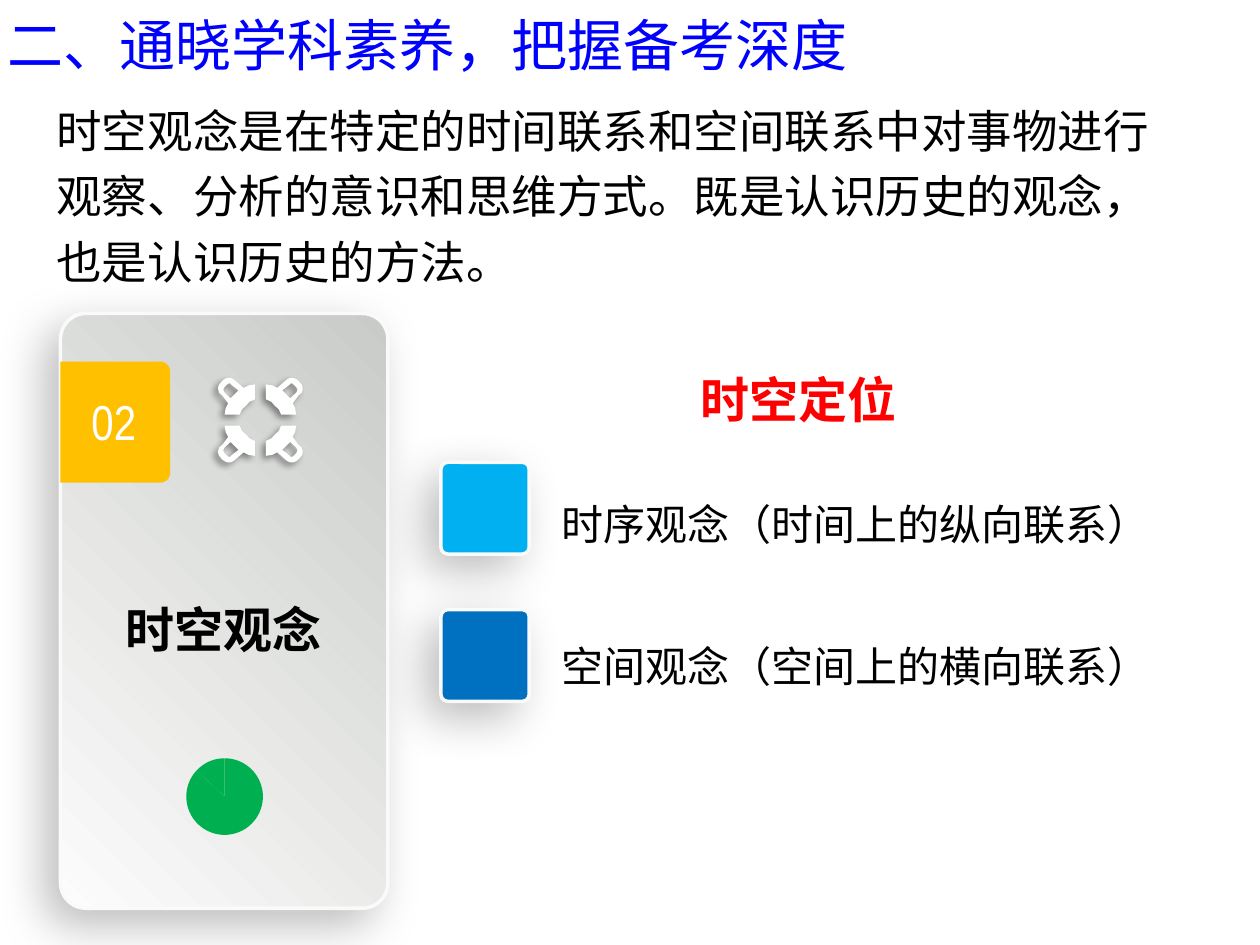
from math import cos, sin, pi
from pptx import Presentation
from pptx.chart.data import CategoryChartData as Data
from pptx.dml.color import RGBColor as Rgb
from pptx.enum.chart import XL_CHART_TYPE as Kind
from pptx.enum.shapes import MSO_SHAPE as Form
from pptx.enum.text import PP_ALIGN as Align
from pptx.oxml import parse_xml
from pptx.oxml.ns import nsdecls, qn
from pptx.util import Cm, Pt

HUE = {
    "title": "0000FF", "text": "000000", "red": "FF0000", "white": "FFFFFF",
    "edge": "FAFAFA", "dark": "C9CBC8", "light": "FCFCFC", "badge": "FFC000",
    "pie": "00B050", "time": "00B0F0", "space": "0070C0",
}
SANS, SLIM = "Noto Sans CJK SC", "Arial Narrow"
HEAD = {"size": Pt(28), "bold": True}
ITEM = {"size": Pt(24)}

TEXTS = [
    ("二、通晓学科素养，把握备考深度", (-0.1, 0.08, 19.35, 1.63),
     "title", SANS, {"size": Pt(32)}, {}),
    ("02", (1.47, 7.77, 1.65, 1.45),
     "white", SLIM, {"size": Pt(28)}, {"alignment": Align.CENTER}),
    ("时空观念", (1.27, 11.96, 6.48, 1.45),
     "text", SANS, HEAD, {"alignment": Align.CENTER}),
    ("时空观念是在特定的时间联系和空间联系中对事物进行观察、分析的意识和思维方式。"
     "既是认识历史的观念，也是认识历史的方法。", (0.89, 1.73, 23.39, 4.27),
     "text", SANS, {"size": Pt(26)}, {"line_spacing": 1.2}),
    ("时序观念（时间上的纵向联系）", (11.07, 9.42, 12.93, 1.63),
     "text", SANS, ITEM, {"line_spacing": 1.5}),
    ("空间观念（空间上的横向联系）", (11.07, 12.27, 12.93, 1.8),
     "text", SANS, ITEM, {"line_spacing": 1.5}),
    ("时空定位", (11.02, 7.32, 10.16, 1.45),
     "red", SANS, HEAD, {"alignment": Align.CENTER}),
]
CARD = (1.22, 6.32, 6.6, 11.99)
TILES = [("time", (8.89, 9.32, 1.78, 1.85)), ("space", (8.89, 12.29, 1.78, 1.85))]
PIE = (2.84, 14.94, 3.38, 2.24)
SHARE = [("1", 87), ("2", 13)]
PLOT = {"x": 0.27, "y": 0.155, "w": 0.46, "h": 0.69}
SOFT = (26, 27, 12)
TIGHT = (40, 4, 3)

ARM = [(42, 11), (72, 11), (70, 24), (65, 34), (77, 50), (83, 55), (85, 61), (85, 67),
       (83, 72), (77, 79), (72, 83), (67, 85), (60, 85), (55, 83), (50, 79), (34, 65),
       (24, 70), (11, 72), (11, 42), (22, 37), (29, 29), (37, 22)]
HOLE = [(60, 44), (44, 60), (57, 70), (62, 75), (67, 72), (72, 67), (75, 61), (72, 55)]
RING = [[(x * a, y * b) for x, y in loop]
        for a in (1, -1) for b in (1, -1) for loop in (ARM, HOLE)]


def arc(x, y, r, start):
    turns = [start + pi / 2 * i / 8 for i in range(9)]
    return [(x + r * cos(t), y + r * sin(t)) for t in turns]


TAB = [[(0, 0), *arc(201, 20, 20, -pi / 2), *arc(201, 224, 20, 0), (0, 244)]]


def box(at):
    return [Cm(v) for v in at]


def tint(fill, hue):
    fill.solid()
    fill.fore_color.rgb = Rgb.from_string(HUE[hue])


def shade(shape, alpha, blur, dist):
    shape.shadow.inherit = False
    glow = parse_xml(
        f'<a:outerShdw {nsdecls("a")} blurRad="{Pt(blur)}" dist="{Pt(dist)}" '
        f'dir="8100000" algn="tr" rotWithShape="0"><a:srgbClr val="000000">'
        f'<a:alpha val="{alpha * 1000}"/></a:srgbClr></a:outerShdw>')
    shape._element.spPr.find(qn("a:effectLst")).append(glow)


def panel(slide, at):
    shape = slide.shapes.add_shape(Form.ROUNDED_RECTANGLE, *box(at))
    shape.adjustments[0] = 0.078
    tint(shape.line.fill, "edge")
    shape.line.width = Pt(2)
    shade(shape, *SOFT)
    return shape


def outline(slide, loops, x, y, hue):
    pen = slide.shapes.build_freeform(*loops[0][0], scale=Cm(0.01))
    for i, loop in enumerate(loops):
        if i:
            pen.move_to(*loop[0])
        pen.add_line_segments(loop[1:], close=True)
    shape = pen.convert_to_shape(Cm(x), Cm(y))
    tint(shape.fill, hue)
    shape.line.fill.background()
    shape.shadow.inherit = False
    return shape


def write(slide, words, at, hue, face, style, para):
    frame = slide.shapes.add_textbox(*box(at)).text_frame
    frame.word_wrap = True
    line = frame.paragraphs[0]
    run = line.add_run()
    run.text = words
    for part, values in ((line, para), (run.font, {"name": face, **style})):
        for key, value in values.items():
            setattr(part, key, value)
    run.font.color.rgb = Rgb.from_string(HUE[hue])
    run.font._element.append(parse_xml(f'<a:ea {nsdecls("a")} typeface="{face}"/>'))


def draw_pie(slide):
    data = Data()
    data.categories = [name for name, _ in SHARE]
    data.add_series("Series 1", [value for _, value in SHARE])
    chart = slide.shapes.add_chart(Kind.PIE, *box(PIE), data).chart
    chart.has_title = chart.has_legend = False
    chart.font.name, chart.font.size = "Calibri", Pt(18)
    chart.font.color.rgb = Rgb.from_string(HUE["text"])
    plot = chart.plots[0]
    plot.vary_by_categories = False
    for i in range(len(SHARE)):
        form = plot.series[0].points[i].format
        tint(form.fill, "pie")
        form.line.fill.background()
    area = chart._chartSpace.chart.plotArea
    for old in area.findall(qn("c:layout")):
        area.remove(old)
    spots = "".join(f'<c:{k} val="{v}"/>' for k, v in PLOT.items())
    area.insert(0, parse_xml(
        f'<c:layout {nsdecls("c")}><c:manualLayout><c:layoutTarget val="inner"/>'
        f'<c:xMode val="edge"/><c:yMode val="edge"/>{spots}</c:manualLayout></c:layout>'))


def main():
    deck = Presentation()
    deck.slide_width, deck.slide_height = Cm(25.4), Cm(19.05)
    slide = deck.slides.add_slide(deck.slide_layouts[6])
    card = panel(slide, CARD)
    card.fill.gradient()
    card.fill.gradient_angle = 225
    for stop, hue, spot in zip(card.fill.gradient_stops, ("dark", "light"), (0, 1)):
        stop.color.rgb = Rgb.from_string(HUE[hue])
        stop.position = spot
    outline(slide, TAB, 1.22, 7.29, "badge")
    draw_pie(slide)
    shade(outline(slide, RING, 5.25, 8.47, "white"), *TIGHT)
    for hue, at in TILES:
        tint(panel(slide, at).fill, hue)
    for row in TEXTS:
        write(slide, *row)
    deck.save("out.pptx")


if __name__ == "__main__":
    main()
